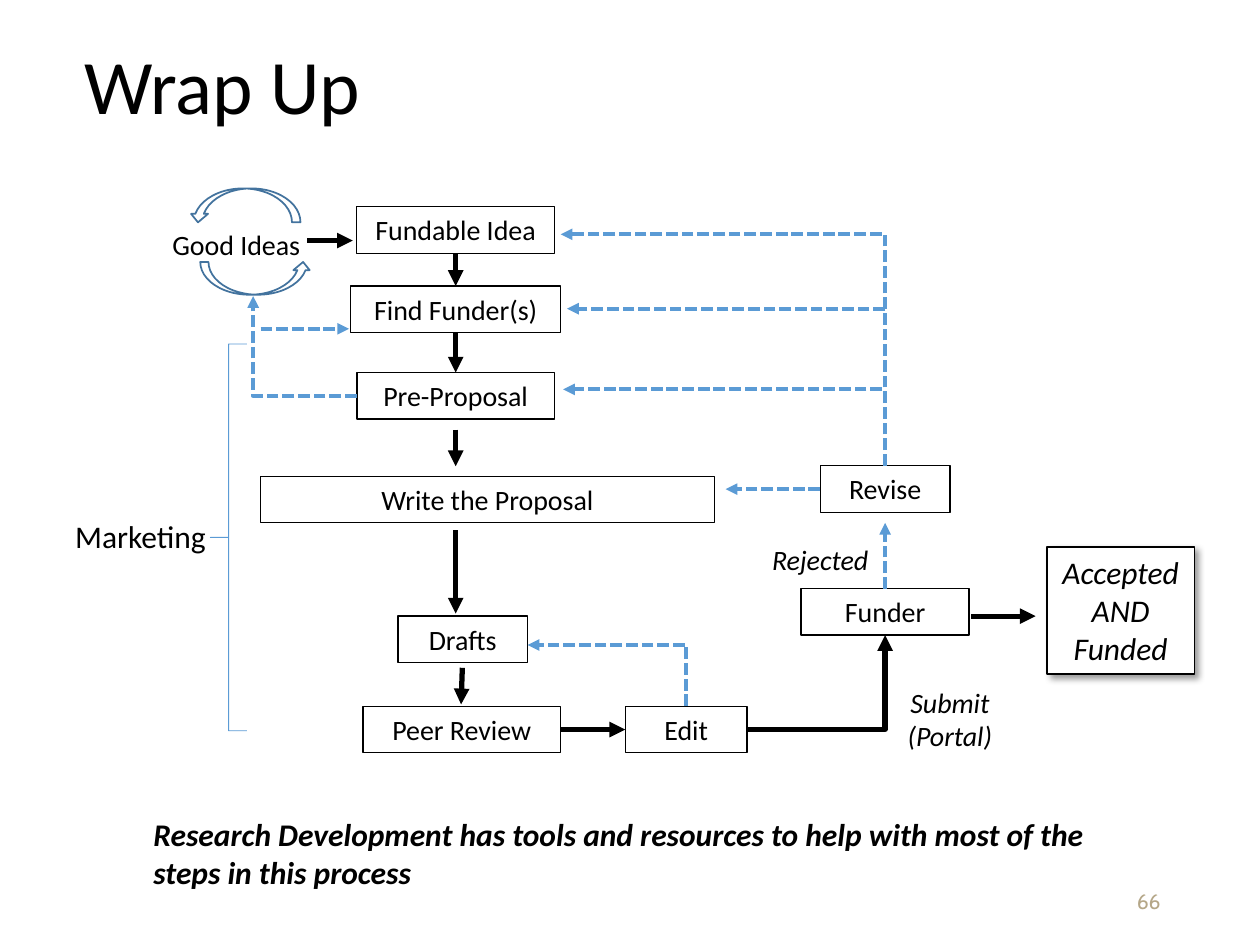
from dataclasses import dataclass
from typing import Optional

from lxml import etree
from pptx import Presentation
from pptx.dml.color import RGBColor
from pptx.enum.dml import MSO_LINE
from pptx.enum.shapes import MSO_CONNECTOR, MSO_SHAPE
from pptx.enum.text import MSO_ANCHOR, MSO_AUTO_SIZE, PP_ALIGN
from pptx.oxml.ns import qn
from pptx.util import Pt

RECT, CURVED_ARROW, BRACE = (
    MSO_SHAPE.RECTANGLE, MSO_SHAPE.CURVED_RIGHT_ARROW, MSO_SHAPE.LEFT_BRACE)
STRAIGHT, ELBOW = MSO_CONNECTOR.STRAIGHT, MSO_CONNECTOR.ELBOW
DASH = MSO_LINE.SQUARE_DOT
TOP, MIDDLE = MSO_ANCHOR.TOP, MSO_ANCHOR.MIDDLE
LEFT, CENTER, RIGHT = PP_ALIGN.LEFT, PP_ALIGN.CENTER, PP_ALIGN.RIGHT
FIT, NO_FIT = MSO_AUTO_SIZE.SHAPE_TO_FIT_TEXT, MSO_AUTO_SIZE.NONE
SIDE_TOP, SIDE_LEFT, SIDE_BOTTOM, SIDE_RIGHT = range(4)

BLACK, WHITE, BLUE, DARK_BLUE, TAN = "000000", "FFFFFF", "5B9BD5", "43739E", "B5A788"
ROW = 26.6  # height of a one-line box
MAIN_X = 260.4  # axis of the downward steps
REVIEW_X = 505.8  # axis of Funder and Revise
EDIT_TOP = 403.6  # top of Peer Review and Edit
EDIT_Y = EDIT_TOP + ROW / 2


@dataclass
class Block:
    """A text, with a frame around it if it is a step."""
    text: str
    left: float
    top: float
    width: float
    height: float = ROW
    size: float = 16
    align: PP_ALIGN = CENTER
    anchor: MSO_ANCHOR = TOP
    bold: bool = False
    italic: bool = False
    color: str = BLACK
    font: str = "Calibri"
    wrap: bool = True
    border: Optional[float] = None
    fill: Optional[str] = None


@dataclass
class Arrow:
    """An arrow; a join is a step name and the side it touches."""
    start: tuple[float, float]
    end: tuple[float, float]
    feedback: bool = False
    start_join: Optional[tuple[str, int]] = None
    end_join: Optional[tuple[str, int]] = None
    bend: Optional[str] = None  # "across" or "up": direction of the first leg


def rgb(value: str) -> RGBColor:
    return RGBColor.from_string(value)


def set_line(line, color: str, width: float) -> None:
    line.color.rgb = rgb(color)
    line.width = Pt(width)


def draw_block(shapes, block: Block):
    box = tuple(map(Pt, (block.left, block.top, block.width, block.height)))
    if block.border:
        shape = shapes.add_shape(RECT, *box)
        shape.shadow.inherit = False
        shape.fill.background()
        set_line(shape.line, BLACK, block.border)
    else:
        shape = shapes.add_textbox(*box)
    if block.fill:
        shape.fill.solid()
        shape.fill.fore_color.rgb = rgb(block.fill)
    frame = shape.text_frame
    frame_format = {"word_wrap": block.wrap, "vertical_anchor": block.anchor,
                    "auto_size": FIT if block.anchor == TOP else NO_FIT}
    for name, value in frame_format.items():
        setattr(frame, name, value)
    paragraph = frame.paragraphs[0]
    paragraph.alignment = block.align
    run = paragraph.add_run()
    run.text = block.text
    run_format = {"name": block.font, "size": Pt(block.size),
                  "bold": block.bold, "italic": block.italic}
    for name, value in run_format.items():
        setattr(run.font, name, value)
    run.font.color.rgb = rgb(block.color)
    return shape


def draw_outline(shapes, kind, box: tuple, color: str, width: float):
    shape = shapes.add_shape(kind, *map(Pt, box))
    shape.shadow.inherit = False
    shape.fill.background()
    set_line(shape.line, color, width)
    return shape


def draw_arrow(shapes, arrow: Arrow, steps: dict) -> None:
    (x1, y1), (x2, y2) = arrow.start, arrow.end
    if arrow.bend == "up":
        # Up, then left: lay the elbow on its side and turn it by 270 degrees
        center_x, center_y = (x1 + x2) / 2, (y1 + y2) / 2
        half_w, half_h = (y1 - y2) / 2, (x1 - x2) / 2
        x1, x2 = center_x - half_w, center_x + half_w
        y1, y2 = center_y + half_h, center_y - half_h
    connector = shapes.add_connector(ELBOW if arrow.bend else STRAIGHT,
                                     *map(Pt, (x1, y1, x2, y2)))
    properties = connector._element.spPr
    if arrow.bend:
        properties.find(qn("a:prstGeom")).set("prst", "bentConnector2")
    if arrow.bend == "up":
        properties.find(qn("a:xfrm")).set("rot", str(270 * 60000))
    if arrow.start_join:
        name, side = arrow.start_join
        connector.begin_connect(steps[name], side)
    if arrow.end_join:
        name, side = arrow.end_join
        connector.end_connect(steps[name], side)
    set_line(connector.line, *((BLUE, 2.25) if arrow.feedback else (BLACK, 3)))
    if arrow.feedback:
        connector.line.dash_style = DASH
    etree.SubElement(properties.find(qn("a:ln")), qn("a:tailEnd"), type="triangle")
    etree.SubElement(properties, qn("a:effectLst"))


def add_shadow(shape) -> None:
    effects = shape._element.spPr.find(qn("a:effectLst"))
    shadow = etree.SubElement(effects, qn("a:outerShdw"), blurRad=str(Pt(4)),
                              dist=str(Pt(3)), dir=str(45 * 60000), algn="tl", rotWithShape="0")
    color = etree.SubElement(shadow, qn("a:srgbClr"), val=BLACK)
    etree.SubElement(color, qn("a:alpha"), val="40000")


STEPS = [
    Block("Fundable Idea", 203.9, 118.2, 113, border=0.75),
    Block("Find Funder(s)", 200.4, 163.4, 120, border=0.75),
    Block("Pre-Proposal", 203.9, 212.9, 113, border=1),
    Block("Write the Proposal", 149, 272.2, 259.2, border=0.5),
    Block("Drafts", 227.5, 352.1, 73.8, border=0.75),
    Block("Peer Review", 207.4, EDIT_TOP, 113, border=0.75),
    Block("Edit", 357.3, EDIT_TOP, 69.6, border=0.75),
    Block("Funder", 457.8, 336.4, 96, border=0.75, fill=WHITE),
    Block("Revise", 468.7, 266.2, 74.2, border=0.75),
    Block("Accepted AND Funded", 598.3, 312.5, 84.2, 72.7, 18, italic=True,
          border=0.75, fill=WHITE),
]

LABELS = [
    Block("Wrap Up", 41, 18, 620.6, 66.2, 44, LEFT, MIDDLE),
    Block("66", 508.3, 500.4, 162, 28.8, 12, RIGHT, MIDDLE, color=TAN, font="Cabin"),
    Block("Good Ideas", 91.4, 126.7, 96.5, align=LEFT),
    Block("Submit (Portal)", 509, 388.1, 67.7, 46, italic=True, fill=WHITE),
    Block("Rejected", 407.5, 306.7, 122.4, italic=True),
    Block("Marketing", 35.3, 291.6, 90, 29, 18, wrap=False),
    Block("Research Development has tools and resources to help with most of the "
          "steps in this process", 80.6, 462.2, 554.4, 51, 18, LEFT, bold=True, italic=True),
]

ARROWS = [
    # Forward path
    Arrow((175.7, 137.5), (201.6, 137.5)),
    Arrow((MAIN_X, 144.8), (MAIN_X, 163.4), start_join=("Fundable Idea", SIDE_BOTTOM),
          end_join=("Find Funder(s)", SIDE_TOP)),
    Arrow((MAIN_X, 190), (MAIN_X, 212.9), start_join=("Find Funder(s)", SIDE_BOTTOM),
          end_join=("Pre-Proposal", SIDE_TOP)),
    Arrow((MAIN_X, 245.5), (MAIN_X, 266.4)),
    Arrow((MAIN_X, 303.1), (MAIN_X, 350.6)),
    Arrow((264.2, 381.6), (263.5, 402.5)),
    Arrow((320.4, EDIT_Y), (357.3, EDIT_Y), start_join=("Peer Review", SIDE_RIGHT),
          end_join=("Edit", SIDE_LEFT)),
    Arrow((426.9, EDIT_Y), (REVIEW_X, 363), bend="across"),
    Arrow((555.1, 352.1), (591.8, 352.1)),
    # Feedback loops
    Arrow((203.9, 226.2), (144.7, 169.2), True, bend="across"),
    Arrow((149, 187.9), (199.5, 187.9), True),
    Arrow((392.1, EDIT_TOP), (301.5, 368.6), True, bend="up"),
    Arrow((REVIEW_X, 336.4), (REVIEW_X, 298.8), True, start_join=("Funder", SIDE_TOP)),
    Arrow((REVIEW_X, 266.2), (320.4, 133.9), True, bend="up"),
    Arrow((REVIEW_X, 176.4), (324, 176.4), True),
    Arrow((504, 222.5), (321.8, 222.5), True),
    Arrow((468.7, 279.5), (414.7, 279.5), True, start_join=("Revise", SIDE_LEFT)),
]


def main() -> None:
    deck = Presentation()
    deck.slide_width, deck.slide_height = Pt(720), Pt(540)
    shapes = deck.slides.add_slide(deck.slide_layouts[6]).shapes

    # Cycle of good ideas
    lower = draw_outline(shapes, CURVED_ARROW, (136.8, 127.4, 18.7, 63.4), DARK_BLUE, 1)
    upper = draw_outline(shapes, CURVED_ARROW, (130.3, 85.7, 19.4, 63.4), DARK_BLUE, 1)
    lower.rotation = upper.rotation = 90
    for flip in ("flipH", "flipV"):
        lower._element.spPr.find(qn("a:xfrm")).set(flip, "1")

    # Span of marketing
    brace = draw_outline(shapes, BRACE, (120.2, 196.6, 20.9, 221), BLUE, 0.5)
    brace.adjustments[0], brace.adjustments[1] = 0, 0.5

    # Steps, labels and arrows
    steps = {step.text: draw_block(shapes, step) for step in STEPS}
    add_shadow(steps["Accepted AND Funded"])
    title, *_ = [draw_block(shapes, label) for label in LABELS]
    title.text_frame.paragraphs[0].line_spacing = 0.9
    for arrow in ARROWS:
        draw_arrow(shapes, arrow, steps)

    deck.save("out.pptx")


if __name__ == "__main__":
    main()
